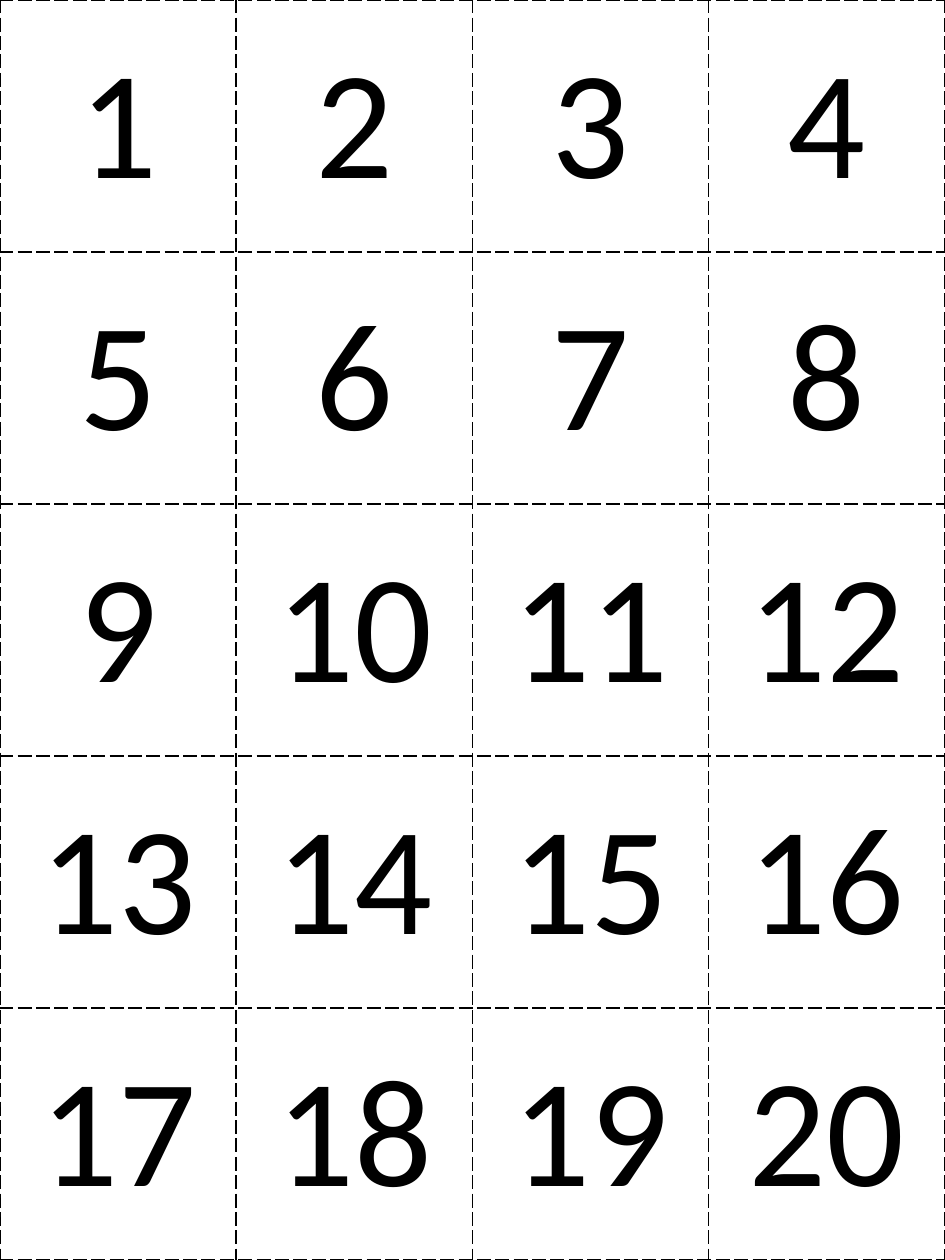
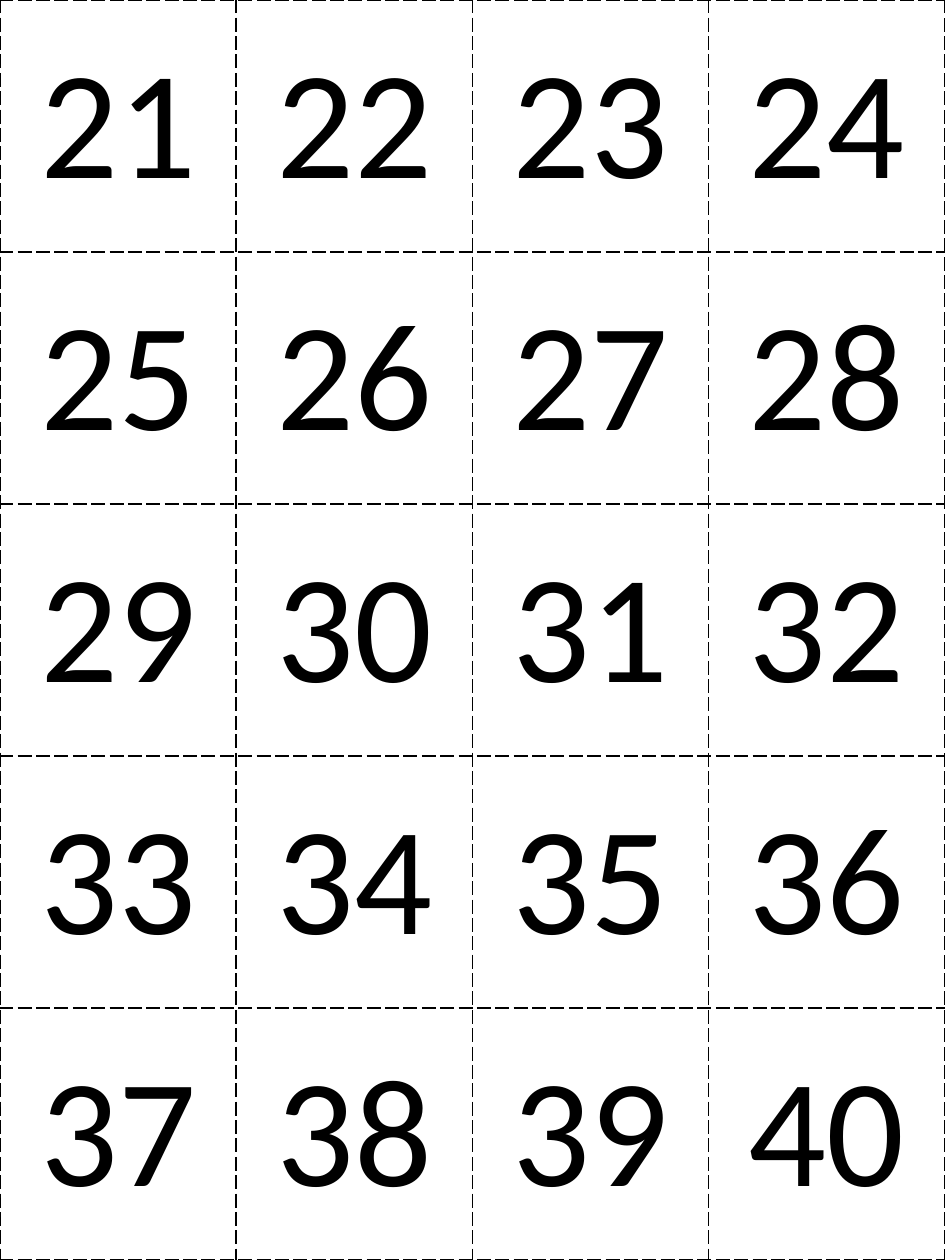
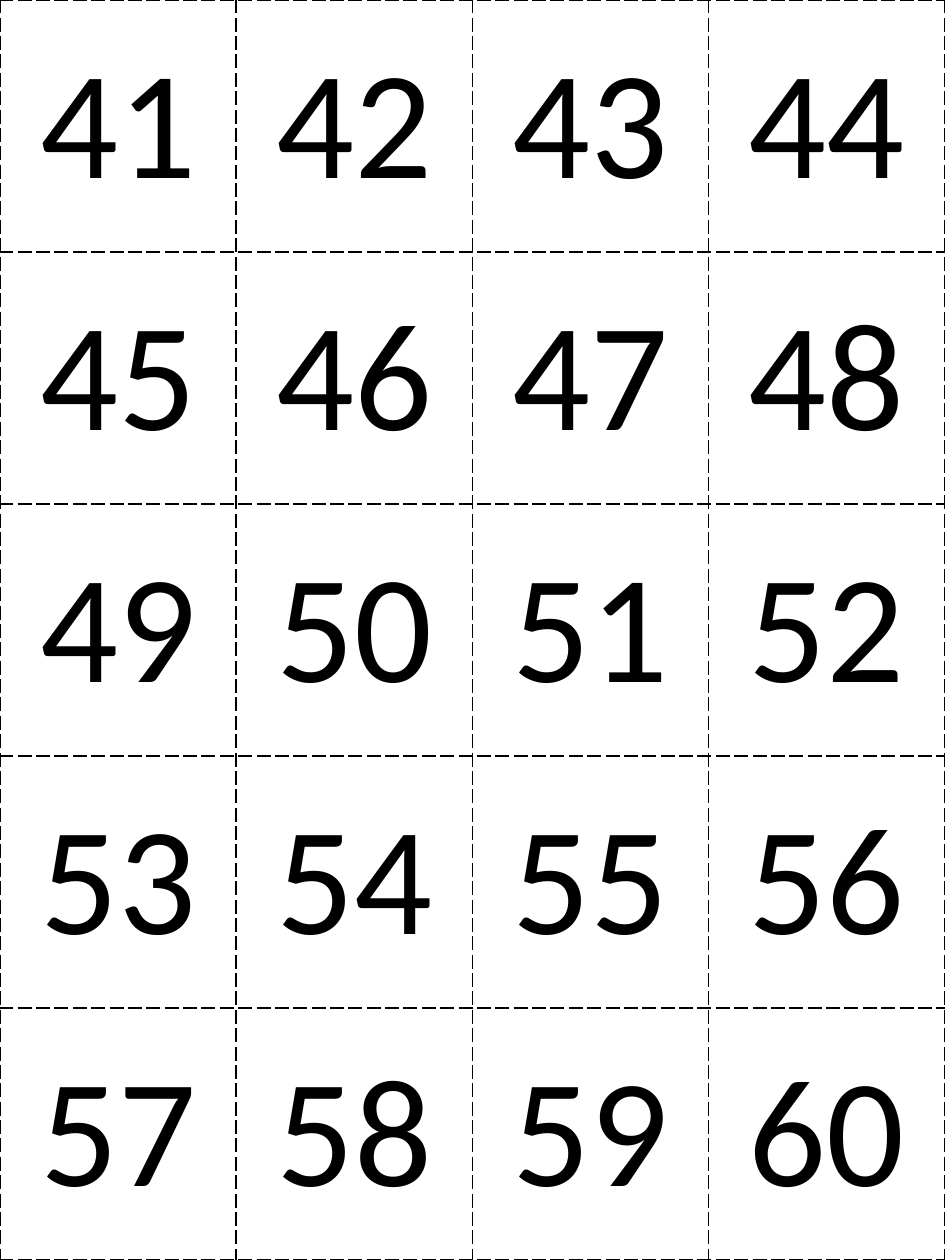
from dataclasses import dataclass

from lxml import etree
from pptx import Presentation
from pptx.dml.color import RGBColor
from pptx.enum.text import MSO_ANCHOR, PP_ALIGN
from pptx.oxml.ns import qn
from pptx.util import Inches, Pt

MIDDLE = MSO_ANCHOR.MIDDLE
CENTER = PP_ALIGN.CENTER
BLANK_LAYOUT = 6
PAGES, ROWS, COLUMNS = 3, 5, 4
PAGE_WIDTH, PAGE_HEIGHT = Inches(7.5), Inches(10)


@dataclass(frozen=True)
class Theme:
    ink: str = "000000"
    paper: str = "FFFFFF"
    font: str = "Calibri"
    number_size: int = 88
    cut_line_width: int = 1
    cut_line_dash: str = "lgDash"


THEME = Theme()


def add_cut_lines(cell):
    properties = cell._tc.get_or_add_tcPr()
    for side in ("a:lnL", "a:lnR", "a:lnT", "a:lnB"):
        line = etree.SubElement(properties, qn(side), w=str(Pt(THEME.cut_line_width)))
        fill = etree.SubElement(line, qn("a:solidFill"))
        etree.SubElement(fill, qn("a:srgbClr"), val=THEME.ink)
        etree.SubElement(line, qn("a:prstDash"), val=THEME.cut_line_dash)


def fill_card(cell, number):
    add_cut_lines(cell)
    cell.fill.background()
    cell.vertical_anchor = MIDDLE
    cell.text = str(number)
    para = cell.text_frame.paragraphs[0]
    para.alignment = CENTER
    para.font.name = THEME.font
    para.font.size = Pt(THEME.number_size)
    para.font.color.rgb = RGBColor.from_string(THEME.ink)


def add_number_cards(page, first_number):
    frame = page.shapes.add_table(ROWS, COLUMNS, 0, 0, PAGE_WIDTH, PAGE_HEIGHT)
    table = frame.table
    table.first_row = False
    table.horz_banding = False
    for number, cell in enumerate(table.iter_cells(), first_number):
        fill_card(cell, number)


def add_page(deck):
    page = deck.slides.add_slide(deck.slide_layouts[BLANK_LAYOUT])
    page.background.fill.solid()
    page.background.fill.fore_color.rgb = RGBColor.from_string(THEME.paper)
    return page


def main():
    deck = Presentation()
    deck.slide_width, deck.slide_height = PAGE_WIDTH, PAGE_HEIGHT
    for index in range(PAGES):
        add_number_cards(add_page(deck), index * ROWS * COLUMNS + 1)
    deck.save("out.pptx")


if __name__ == "__main__":
    main()
